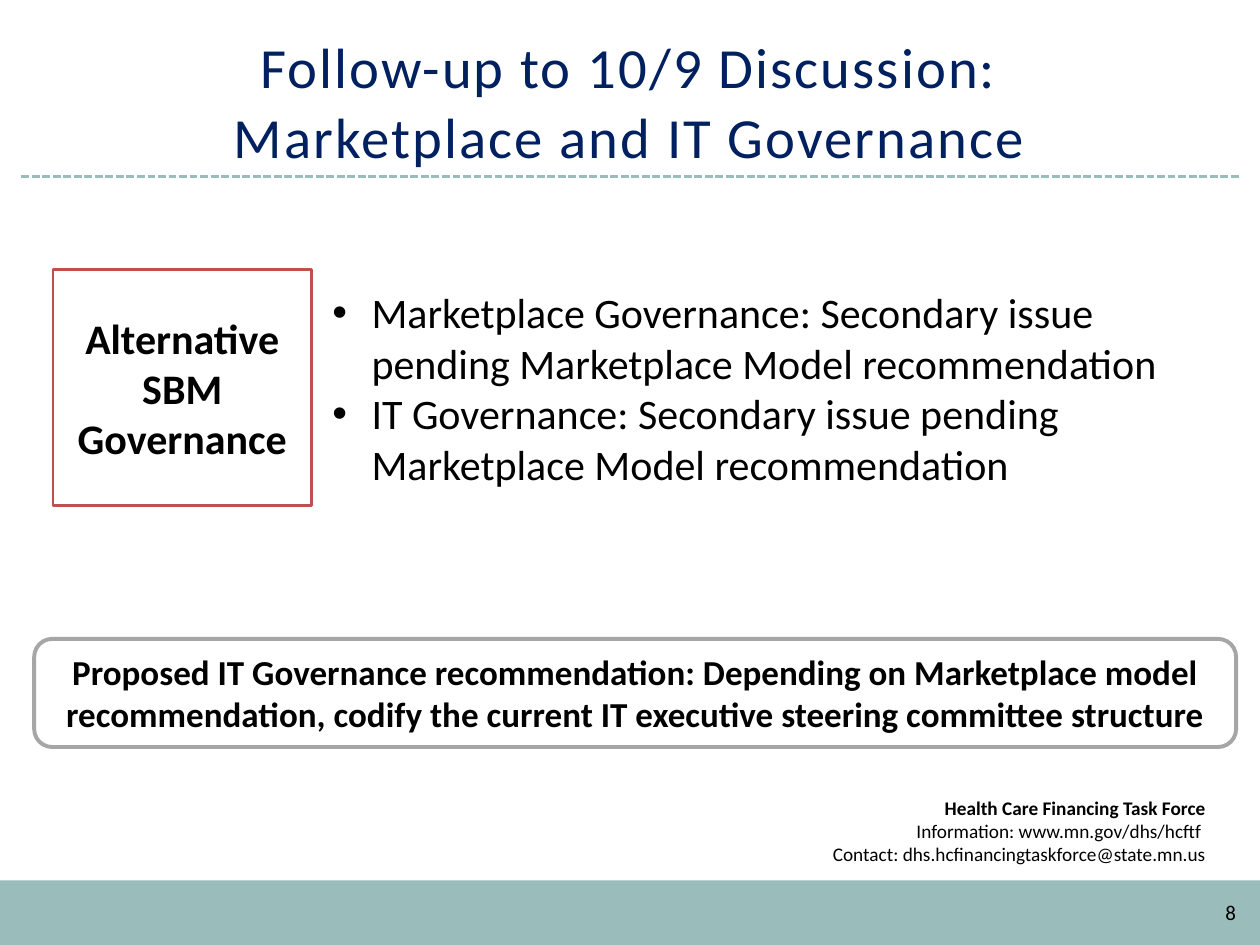
from lxml import etree
from pptx import Presentation
from pptx import util as u
from pptx.dml import color
from pptx.enum import dml, shapes, text
from pptx.oxml import ns

TITLE = "Follow-up to 10/9 Discussion:\nMarketplace and IT Governance"
LABEL = "Alternative SBM Governance"
ISSUES = [
    "Marketplace Governance: Secondary issue pending Marketplace Model recommendation",
    "IT Governance: Secondary issue pending Marketplace Model recommendation",
]
RECOMMENDATION = (
    "Proposed IT Governance recommendation: Depending on Marketplace model "
    "recommendation, codify the current IT executive steering committee structure"
)
FOOTER_HEAD = "Health Care Financing Task Force"
FOOTER_LINES = [
    "Information: www.mn.gov/dhs/hcftf ",
    "Contact: dhs.hcfinancingtaskforce@state.mn.us",
]
PAGE_NUMBER = "8"

THEME = {
    "font": "Calibri",
    "ink": "000000", "navy": "002060", "teal": "9ABCBB",
    "red": "C0504D", "grey": "A6A6A6", "white": "FFFFFF",
    "title": 32.4, "body": 24, "callout": 20, "number": 12, "footer": 11,
}
ROW_TOP, ROW_HEIGHT = 5.44, 4.75
PLACES = {
    "bar": (0, 17.75, 25.4, 1.3),
    "footer": (11.53, 15.9, 13.03, 1.7),
    "title": (0.84, 0.64, 23.7, 2.92),
    "label": (1.07, ROW_TOP, 5.21, ROW_HEIGHT),
    "issues": (6.45, ROW_TOP, 17.37, ROW_HEIGHT),
    "recommendation": (0.69, 12.88, 24.23, 2.18),
    "number": (23.7, 17.88, 1.47, 1.02),
}
RULE = (0.43, 3.56, 24.97, 3.56)
ALIGN = text.PP_ALIGN
ANCHOR = text.MSO_ANCHOR


def rgb(name):
    return color.RGBColor.from_string(THEME[name])


def place(name):
    return [u.Cm(value) for value in PLACES[name]]


def add_bullet(para, indent):
    props = para._p.get_or_add_pPr()
    props.set("marL", str(u.Cm(indent)))
    props.set("indent", str(-u.Cm(indent)))
    etree.SubElement(props, ns.qn("a:buFont")).set("typeface", "Arial")
    etree.SubElement(props, ns.qn("a:buChar")).set("char", "•")


def write(box, paragraphs, size, ink="ink", bold=False, align=ALIGN.LEFT,
          anchor=ANCHOR.MIDDLE, bullet=None, leading=None, tracking=None):
    frame = box.text_frame
    frame.word_wrap = True
    frame.auto_size = text.MSO_AUTO_SIZE.NONE
    frame.vertical_anchor = anchor
    for index, content in enumerate(paragraphs):
        para = frame.paragraphs[0] if index == 0 else frame.add_paragraph()
        para.alignment = align
        para.space_before = u.Pt(0)
        if leading:
            para.line_spacing = u.Pt(leading)
        if bullet:
            add_bullet(para, bullet)
        for number, line in enumerate(content.split("\n")):
            if number:
                para.add_line_break()
            span = para.add_run()
            span.text = line
            span.font.name = THEME["font"]
            span.font.size = u.Pt(THEME[size])
            span.font.bold = bold
            span.font.color.rgb = rgb(ink)
            if tracking:
                span.font._element.set("spc", str(round(tracking * 100)))
    return frame


def add_panel(page, name, fill, line=None, width=0, opacity=None,
              kind=shapes.MSO_SHAPE.RECTANGLE):
    panel = page.shapes.add_shape(kind, *place(name))
    panel.shadow.inherit = False
    panel.fill.solid()
    panel.fill.fore_color.rgb = rgb(fill)
    if opacity:
        tint = panel._element.spPr.find(".//" + ns.qn("a:srgbClr"))
        etree.SubElement(tint, ns.qn("a:alpha")).set("val", str(opacity * 1000))
    if line:
        panel.line.color.rgb = rgb(line)
        panel.line.width = u.Pt(width)
    else:
        panel.line.fill.background()
    return panel


def add_rule(page):
    rule = page.shapes.add_connector(
        shapes.MSO_CONNECTOR.STRAIGHT, *[u.Cm(value) for value in RULE])
    rule.line.color.rgb = rgb("teal")
    rule.line.width = u.Pt(1.5)
    rule.line.dash_style = dml.MSO_LINE.SQUARE_DOT
    etree.SubElement(rule._element.spPr, ns.qn("a:effectLst"))


def main():
    deck = Presentation()
    deck.slide_width, deck.slide_height = u.Cm(25.4), u.Cm(19.05)
    page = deck.slides.add_slide(deck.slide_layouts[5])

    add_panel(page, "bar", "teal")
    add_rule(page)

    footer = add_panel(page, "footer", "white")
    frame = write(footer, [FOOTER_HEAD, *FOOTER_LINES], "footer", align=ALIGN.RIGHT)
    frame.paragraphs[0].runs[0].font.bold = True

    title = page.shapes.title
    title.left, title.top, title.width, title.height = place("title")
    write(title, [TITLE], "title", ink="navy", align=ALIGN.CENTER,
          anchor=ANCHOR.BOTTOM, leading=40, tracking=1.2)

    label = add_panel(page, "label", "white", "red", 1.5, opacity=30)
    write(label, [LABEL], "body", bold=True, align=ALIGN.CENTER)

    issues = page.shapes.add_textbox(*place("issues"))
    write(issues, ISSUES, "body", bullet=0.79)

    callout = add_panel(page, "recommendation", "white", "grey", 2.25, opacity=25,
                        kind=shapes.MSO_SHAPE.ROUNDED_RECTANGLE)
    write(callout, [RECOMMENDATION], "callout", bold=True, align=ALIGN.CENTER)

    number = page.shapes.add_textbox(*place("number"))
    write(number, [PAGE_NUMBER], "number", align=ALIGN.RIGHT)

    deck.save("out.pptx")


if __name__ == "__main__":
    main()
